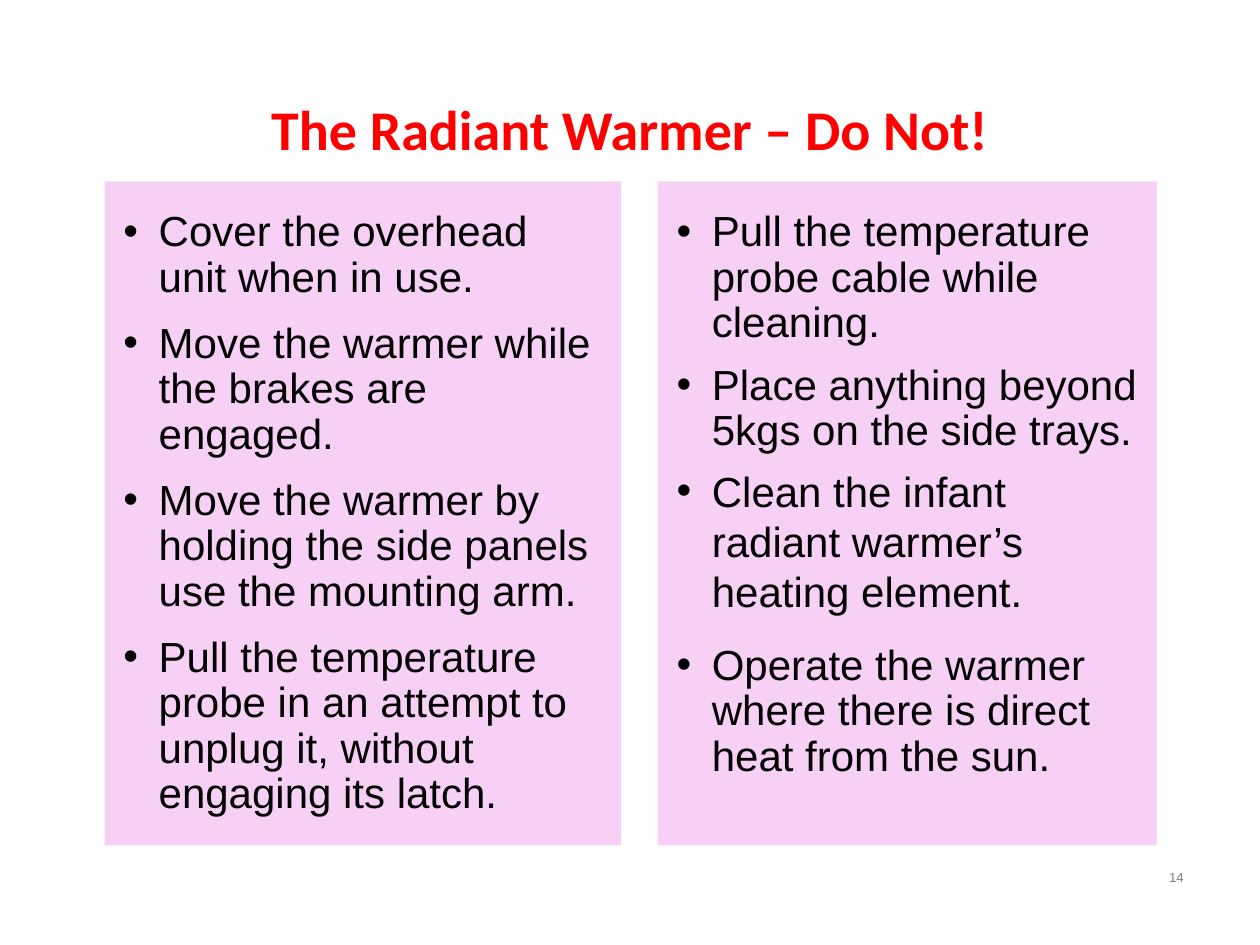
from dataclasses import dataclass

from lxml import etree
from pptx import Presentation
from pptx.dml.color import RGBColor
from pptx.enum.shapes import MSO_SHAPE
from pptx.enum.text import MSO_ANCHOR, PP_ALIGN
from pptx.oxml.ns import qn
from pptx.util import Inches, Pt

RECTANGLE = MSO_SHAPE.RECTANGLE
TOP, MIDDLE = MSO_ANCHOR.TOP, MSO_ANCHOR.MIDDLE
LEFT, CENTER = PP_ALIGN.LEFT, PP_ALIGN.CENTER


@dataclass(frozen=True)
class Theme:
    panel: str = "F7D1F5"
    title: str = "FF0000"
    body: str = "000000"
    number: str = "808080"
    title_font: str = "Calibri"
    body_font: str = "Arial"
    title_size: float = 32
    body_size: float = 24
    number_size: float = 7.5


THEME = Theme()
WIDTH, HEIGHT = 10, 7.5
PANEL_TOP, PANEL_HEIGHT = 1.44, 5.27
PANEL_INSETS = (0.15, 0.23, 0.15, 0.04)
INDENT = 0.28

EVEN = {"line_spacing": 0.9, "space_before": Pt(6), "space_after": Pt(6)}
TIGHT = {"line_spacing": 0.9, "space_before": Pt(10), "space_after": Pt(0)}
LOOSE = {**EVEN, "line_spacing": 1.0}

COLUMNS = [
    (0.83, 4.1, [
        ("Cover the overhead unit when in use.", EVEN),
        ("Move the warmer while the brakes are engaged.", EVEN),
        ("Move the warmer by holding the side panels use the mounting arm.", EVEN),
        ("Pull the temperature probe in an attempt to unplug it, "
         "without engaging its latch.", EVEN),
    ]),
    (5.22, 3.96, [
        ("Pull the temperature probe cable while cleaning.", TIGHT),
        ("Place anything beyond 5kgs on the side trays.", TIGHT),
        ("Clean the infant radiant warmer’s heating element.", LOOSE),
        ("Operate the warmer where there is direct heat from the sun.", TIGHT),
    ]),
]


def apply_format(target, values):
    for name, value in values.items():
        setattr(target, name, value)


def write(paragraph, text, font, size, color, bold=False):
    run = paragraph.add_run()
    run.text = text
    apply_format(run.font, {"name": font, "size": Pt(size), "bold": bold})
    run.font.color.rgb = RGBColor.from_string(color)


def add_bullet(paragraph):
    properties = paragraph._p.get_or_add_pPr()
    properties.set("marL", str(Inches(INDENT)))
    properties.set("indent", str(-Inches(INDENT)))
    etree.SubElement(properties, qn("a:buFont")).set("typeface", THEME.body_font)
    etree.SubElement(properties, qn("a:buChar")).set("char", "•")


def add_label(slide, area, text, anchor, alignment, **style):
    shape = slide.shapes.add_textbox(*map(Inches, area))
    frame = shape.text_frame
    apply_format(frame, {"word_wrap": True, "vertical_anchor": anchor})
    paragraph = frame.paragraphs[0]
    paragraph.alignment = alignment
    write(paragraph, text, **style)


def add_panel(slide, left, width, items):
    area = (left, PANEL_TOP, width, PANEL_HEIGHT)
    shape = slide.shapes.add_shape(RECTANGLE, *map(Inches, area))
    shape.shadow.inherit = False
    shape.fill.solid()
    shape.fill.fore_color.rgb = RGBColor.from_string(THEME.panel)
    shape.line.fill.background()
    frame = shape.text_frame
    sides = ("margin_left", "margin_top", "margin_right", "margin_bottom")
    apply_format(frame, dict(zip(sides, map(Inches, PANEL_INSETS))))
    apply_format(frame, {"word_wrap": True, "vertical_anchor": TOP})
    for index, (text, spacing) in enumerate(items):
        paragraph = frame.add_paragraph() if index else frame.paragraphs[0]
        add_bullet(paragraph)
        apply_format(paragraph, {"alignment": LEFT, **spacing})
        if index == 0:
            paragraph.space_before = Pt(0)
        write(paragraph, text, THEME.body_font, THEME.body_size, THEME.body)


def main():
    presentation = Presentation()
    apply_format(presentation, {"slide_width": Inches(WIDTH),
                                "slide_height": Inches(HEIGHT)})
    slide = presentation.slides.add_slide(presentation.slide_layouts[6])
    title_width = 6.46
    add_label(slide, ((WIDTH - title_width) / 2, 0.74, title_width, 0.56),
              "The Radiant Warmer – Do Not!", MIDDLE, CENTER,
              font=THEME.title_font, size=THEME.title_size,
              color=THEME.title, bold=True)
    for left, width, items in COLUMNS:
        add_panel(slide, left, width, items)
    add_label(slide, (9.18, 6.85, 0.51, 0.3), "14", TOP, LEFT,
              font=THEME.body_font, size=THEME.number_size, color=THEME.number)
    presentation.save("out.pptx")


if __name__ == "__main__":
    main()
